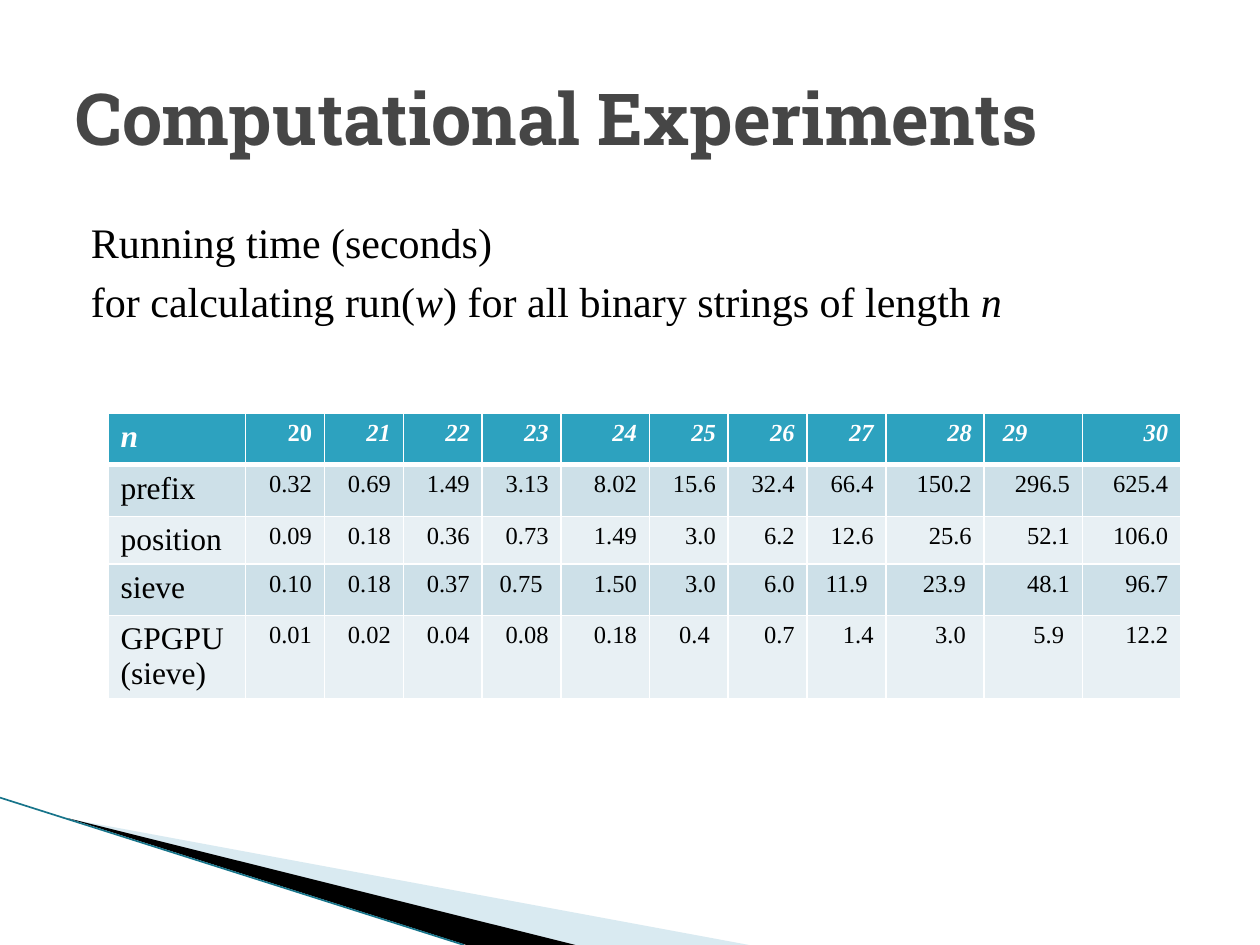
from dataclasses import dataclass
from lxml.etree import SubElement
from pptx import Presentation
from pptx.dml.color import RGBColor as RGB
from pptx.enum.shapes import MSO_CONNECTOR as CONN
from pptx.enum.text import MSO_ANCHOR as ANCHOR, MSO_AUTO_SIZE as AUTO, PP_ALIGN as ALIGN
from pptx.oxml.ns import qn
from pptx.util import Cm, Pt


@dataclass(frozen=True)
class Theme:
    heading: str = "Roboto Slab"
    text: str = "Times New Roman"
    title_color: str = "464646"
    ink: str = "000000"
    white: str = "FFFFFF"
    header: str = "2DA2BF"
    bands: tuple = ("CDE0E8", "E8F0F4")
    wedge: str = "A0CBDC"
    edge: str = "17748A"
    title_size: int = 41
    body_size: int = 24
    label_size: int = 18
    value_size: int = 14


T = Theme()
BODY = [
    [("Running time (seconds)", False)],
    [("for calculating run(", False), ("w", True),
     (") for all binary strings of length ", False), ("n", True)],
]
ROWS = [
    ["n", *map(str, range(20, 31))],
    "prefix 0.32 0.69 1.49 3.13 8.02 15.6 32.4 66.4 150.2 296.5 625.4".split(),
    "position 0.09 0.18 0.36 0.73 1.49 3.0 6.2 12.6 25.6 52.1 106.0".split(),
    "sieve 0.10 0.18 0.37 0.75 1.50 3.0 6.0 11.9 23.9 48.1 96.7".split(),
    ["GPGPU (sieve)", *"0.01 0.02 0.04 0.08 0.18 0.4 0.7 1.4 3.0 5.9 12.2".split()],
]
COL_WIDTHS = [2.77] + [1.59] * 4 + [1.78] + [1.59] * 3 + [1.98] * 3
ROW_HEIGHTS = [1.04, 1.04, 0.92, 1.04, 1.68]
CELL_INSET = 0.25
EXTRA_INSETS = {(0, 10): 0.86} | dict.fromkeys(
    [(3, 4), (3, 8), (3, 9), (4, 6), (4, 9), (4, 10)], 0.12)


def place(sp, box):
    sp.left, sp.top, sp.width, sp.height = map(Cm, box)


def style(r, font, size, color, bold=False, italic=False):
    f = r.font
    f.name, f.size, f.bold, f.italic = font, Pt(size), bold, italic
    f.color.rgb = RGB.from_string(color)


def add_wedge(s, box, points, color, alpha=None):
    x, y = box[:2]
    start, *rest = [(Cm(x + px), Cm(y + py)) for px, py in points]
    builder = s.shapes.build_freeform(*start)
    builder.add_line_segments(rest, close=True)
    sp = builder.convert_to_shape()
    sp.shadow.inherit = False
    sp.line.fill.background()
    sp.fill.solid()
    sp.fill.fore_color.rgb = RGB.from_string(color)
    if alpha:
        clr = sp.element.spPr.find(qn("a:solidFill"))[0]
        SubElement(clr, qn("a:alpha"), val=str(alpha * 1000))
    return sp


def add_corner(s, box):
    x, y, w, h = box
    light = add_wedge(s, box, [(1.4, 0.43), (w, h), (11.58, h)], T.wedge, 40)
    dark = add_wedge(s, box, [(1.35, 0.41), (11.6, h), (9.4, h)], T.ink)
    line = s.shapes.add_connector(CONN.STRAIGHT, Cm(x), Cm(y), Cm(x + 9.35), Cm(y + h))
    line.line.color.rgb = RGB.from_string(T.edge)
    line.line.width = Pt(0.95)
    SubElement(line.element.spPr, qn("a:effectLst"))
    for i, sp in enumerate((light, dark, line), 2):
        s.shapes.element.insert(i, sp.element)


def add_title(s, box, text):
    sp = s.shapes.title
    place(sp, box)
    tf = sp.text_frame
    tf.text = text
    tf.auto_size = AUTO.NONE
    tf.vertical_anchor = ANCHOR.MIDDLE
    p = tf.paragraphs[0]
    p.alignment = ALIGN.LEFT
    style(p.runs[0], T.heading, T.title_size, T.title_color, bold=True)


def add_body(s, box, lines):
    sp = s.placeholders[1]
    place(sp, box)
    tf = sp.text_frame
    tf.auto_size = AUTO.NONE
    tf.margin_top = Cm(0.26)
    for i, parts in enumerate(lines):
        p = tf.add_paragraph() if i else tf.paragraphs[0]
        p.space_before = Pt(5 if i else 0)
        pPr = p._p.get_or_add_pPr()
        pPr.set("marL", str(Cm(1.02)))
        pPr.set("indent", str(Cm(-0.71)))
        SubElement(pPr, qn("a:buNone"))
        for text, italic in parts:
            r = p.add_run()
            r.text = text
            style(r, T.text, T.body_size, T.ink, italic=italic)


def set_borders(cell, row):
    tcPr = cell._tc.get_or_add_tcPr()
    widths = {"L": 1, "R": 1, "T": 3 if row == 1 else 1, "B": 3 if row == 0 else 1}
    for side, width in widths.items():
        ln = SubElement(tcPr, qn(f"a:ln{side}"), w=str(Pt(width)))
        fill = SubElement(ln, qn("a:solidFill"))
        SubElement(fill, qn("a:srgbClr"), val=T.white)


def fill_cell(cell, row, col, text):
    header = row == 0
    set_borders(cell, row)
    cell.fill.solid()
    color = T.header if header else T.bands[(row - 1) % 2]
    cell.fill.fore_color.rgb = RGB.from_string(color)
    cell.margin_left = Cm(CELL_INSET)
    cell.margin_right = Cm(CELL_INSET + EXTRA_INSETS.get((row, col), 0))
    cell.text_frame.text = text
    p = cell.text_frame.paragraphs[0]
    p.alignment = ALIGN.RIGHT if col else ALIGN.LEFT
    style(p.runs[0], T.text, T.value_size if col else T.label_size,
          T.white if header else T.ink, bold=header, italic=header and col != 1)


def add_times_table(s, box, rows):
    table = s.shapes.add_table(len(rows), len(rows[0]), *map(Cm, box)).table
    for column, width in zip(table.columns, COL_WIDTHS):
        column.width = Cm(width)
    for i, (row, height) in enumerate(zip(rows, ROW_HEIGHTS)):
        table.rows[i].height = Cm(height)
        for j, text in enumerate(row):
            fill_cell(table.cell(i, j), i, j, text)


def main():
    prs = Presentation()
    prs.slide_width, prs.slide_height = Cm(25.4), Cm(19.05)
    s = prs.slides.add_slide(prs.slide_layouts[1])
    add_title(s, (1.27, 0.76, 22.86, 3.18), "Computational Experiments")
    add_body(s, (1.27, 4.11, 22.86, 12.57), BODY)
    add_times_table(s, (2.18, 8.33, sum(COL_WIDTHS), sum(ROW_HEIGHTS)), ROWS)
    add_corner(s, (0, 16.08, 15.1, 2.97))
    prs.save("out.pptx")


if __name__ == "__main__":
    main()
